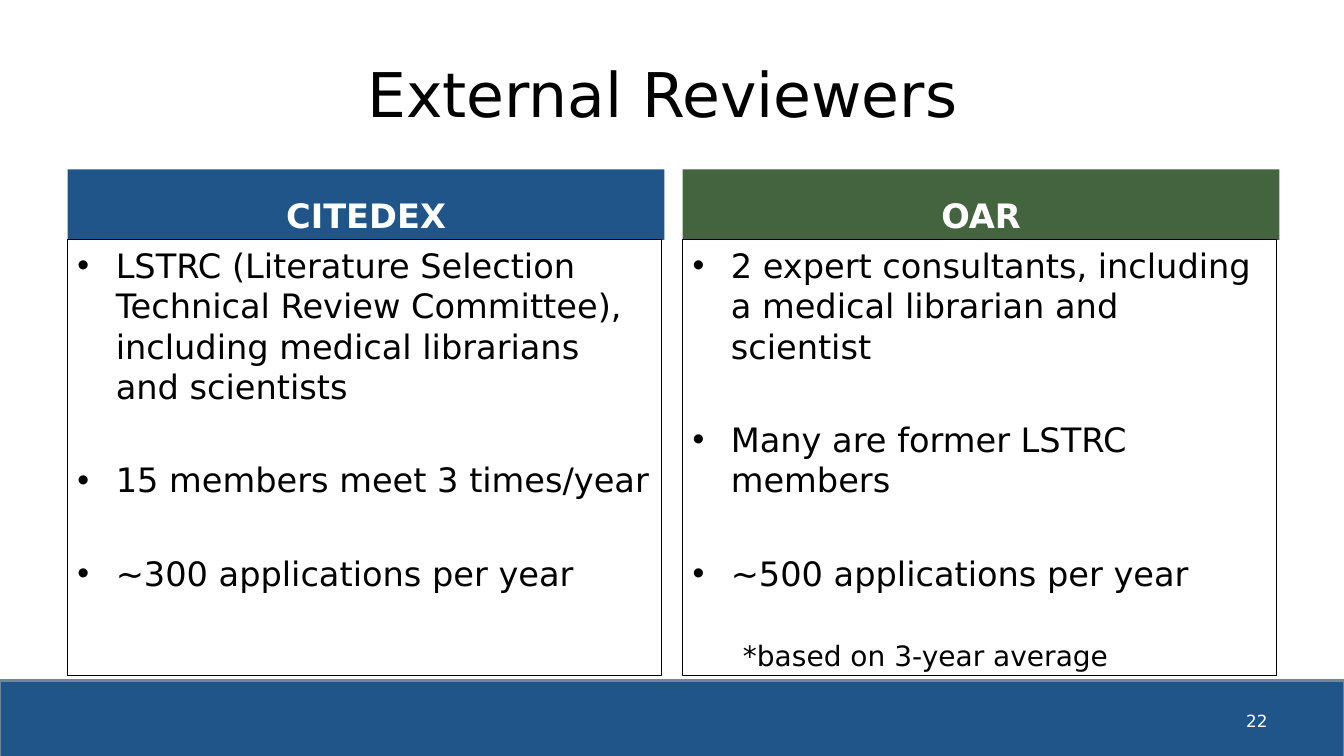
from dataclasses import dataclass

from lxml.etree import SubElement
from pptx import Presentation
from pptx.dml.color import RGBColor
from pptx.enum.shapes import MSO_SHAPE
from pptx.enum.text import MSO_ANCHOR, PP_ALIGN
from pptx.oxml.ns import qn
from pptx.util import Inches, Pt


@dataclass(frozen=True)
class Theme:
    """Colours, font and type sizes of the slide."""
    font: str = "DejaVu Sans"
    blue: str = "20558A"
    green: str = "44633F"
    edge: str = "6D879B"
    black: str = "000000"
    white: str = "FFFFFF"
    title: int = 44
    body: int = 24
    note: int = 20
    number: int = 12


class SlideBuilder:
    """Draws styled elements on the current slide."""

    def __init__(self, s, theme):
        self.s = s
        self.theme = theme

    def rect(self, box, fill=None, line=None, width=0.75):
        """Add a rectangle with optional fill and outline."""
        sp = self.s.shapes.add_shape(MSO_SHAPE.RECTANGLE, *map(Inches, box))
        sp.shadow.inherit = False
        if fill:
            sp.fill.solid()
            sp.fill.fore_color.rgb = RGBColor.from_string(fill)
        else:
            sp.fill.background()
        if line:
            sp.line.color.rgb = RGBColor.from_string(line)
            sp.line.width = Pt(width)
        else:
            sp.line.fill.background()
        return sp

    def run(self, p, text, size, color, bold=False):
        """Add one styled run to a paragraph."""
        r = p.add_run()
        r.text = text
        r.font.name = self.theme.font
        r.font.size = Pt(size)
        r.font.bold = bold
        r.font.color.rgb = RGBColor.from_string(color)

    def label(self, sp, text, size, color, align, anchor, bold=False):
        """Write a single paragraph into a shape."""
        tf = sp.text_frame
        tf.word_wrap = True
        tf.vertical_anchor = anchor
        p = tf.paragraphs[0]
        p.alignment = align
        self.run(p, text, size, color, bold)

    def text(self, box, *style):
        """Add a text box with one paragraph."""
        self.label(self.s.shapes.add_textbox(*map(Inches, box)), *style)

    def indent(self, p, left, hanging=0, bullet=None):
        """Set the indent and bullet of a paragraph."""
        pPr = p._p.get_or_add_pPr()
        pPr.set("marL", str(Inches(left)))
        pPr.set("indent", str(-Inches(hanging)))
        if bullet:
            SubElement(pPr, qn("a:buFont"), typeface="Arial")
            SubElement(pPr, qn("a:buChar"), char=bullet)
        else:
            SubElement(pPr, qn("a:buNone"))

    def column(self, left, heading, fill, items, note=None):
        """Add a heading bar above an outlined bullet list."""
        t = self.theme
        bar = self.rect((left, 1.68, 5.92, 0.7), fill)
        self.label(bar, heading, t.body, t.white, PP_ALIGN.CENTER, MSO_ANCHOR.BOTTOM, True)
        tf = self.rect((left, 2.38, 5.89, 4.32), line=t.black).text_frame
        tf.word_wrap = True
        tf.vertical_anchor = MSO_ANCHOR.TOP
        for i, item in enumerate(items):
            p = tf.paragraphs[0] if i == 0 else tf.add_paragraph()
            p.alignment = PP_ALIGN.LEFT
            p.space_before = Pt(38 if i else 0)
            self.indent(p, 0.38, 0.38, "•")
            self.run(p, item, t.body, t.black)
        if note:
            p = tf.add_paragraph()
            p.alignment = PP_ALIGN.LEFT
            p.space_before = Pt(32)
            self.indent(p, 0.5)
            self.run(p, note, t.note, t.black)


def main():
    """Build the slide and save it."""
    prs = Presentation()
    prs.slide_width, prs.slide_height = Inches(13.33), Inches(7.5)
    t = Theme()
    b = SlideBuilder(prs.slides.add_slide(prs.slide_layouts[6]), t)
    b.rect((0, 6.75, 13.33, 0.83), t.blue, t.edge, 2)
    b.text((0.67, 0.3, 12, 1.25), "External Reviewers ", t.title, t.black,
           PP_ALIGN.CENTER, MSO_ANCHOR.MIDDLE)
    b.text((9.56, 6.95, 3.11, 0.4), "22", t.number, t.white,
           PP_ALIGN.RIGHT, MSO_ANCHOR.MIDDLE)
    b.column(0.67, "CITEDEX", t.blue, [
        "LSTRC (Literature Selection Technical Review Committee), "
        "including medical librarians and scientists",
        "15 members meet 3 times/year",
        "~300 applications per year",
    ])
    b.column(6.77, "OAR", t.green, [
        "2 expert consultants, including a medical librarian and scientist",
        "Many are former LSTRC members",
        "~500 applications per year",
    ], "*based on 3-year average")
    prs.save("out.pptx")


if __name__ == "__main__":
    main()
